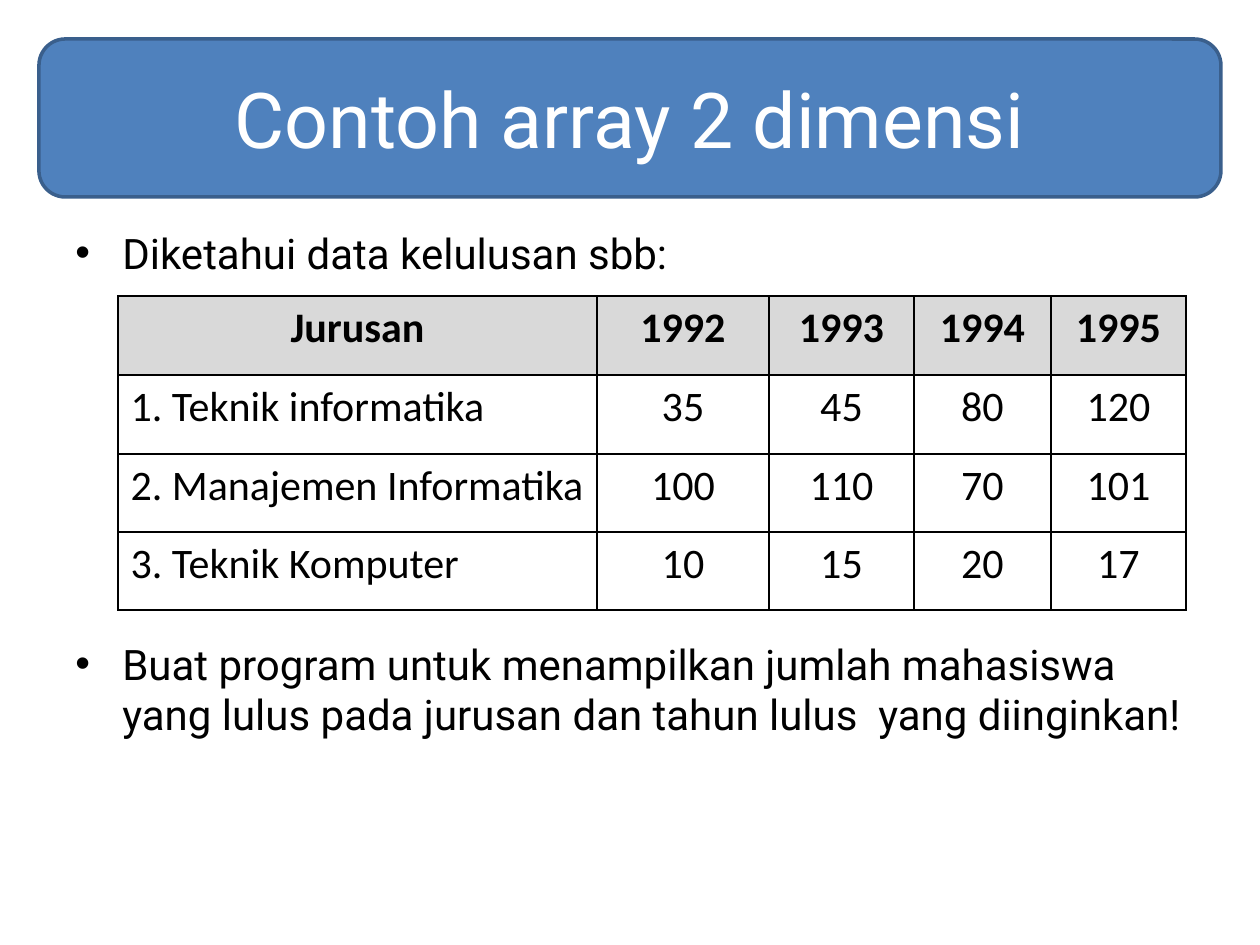
"""Build a slide with a title banner, two bullets and a graduation table."""
from dataclasses import dataclass

from lxml import etree
from pptx import Presentation
from pptx import util as u
from pptx.dml.color import RGBColor
from pptx.enum import shapes, text
from pptx.oxml import ns

SCALE = u.Inches(1) / 126
COLORS = {
    "banner": "4F81BD",
    "edge": "3A5F8C",
    "head": "D9D9D9",
    "light": "FFFFFF",
    "dark": "000000",
}
TITLE_FONT = {"name": "Roboto", "size": u.Pt(44), "bold": False}
BULLET_FONT = {"name": "Roboto", "size": u.Pt(24), "bold": False}
CELL_FONT = {"name": "Calibri", "size": u.Pt(24), "bold": False}
HEAD_FONT = CELL_FONT | {"bold": True}


@dataclass(frozen=True)
class Box:
    left: int
    top: int
    width: int
    height: int

    def emu(self) -> tuple:
        return tuple(map(px, (self.left, self.top, self.width, self.height)))


@dataclass(frozen=True)
class Bullet:
    box: Box
    words: str


TITLE = "Contoh array 2 dimensi"
BANNER = Box(39, 39, 1182, 158)
BULLETS = (
    Bullet(Box(63, 221, 1134, 62), "Diketahui data kelulusan sbb:"),
    Bullet(
        Box(63, 632, 1134, 113),
        "Buat program untuk menampilkan jumlah mahasiswa "
        "yang lulus pada jurusan dan tahun lulus  yang diinginkan!",
    ),
)
COLUMNS = (479, 172, 145, 137, 135)
ROWS = (79, 79, 78, 78)
TABLE = Box(118, 296, sum(COLUMNS), sum(ROWS))
GRADUATES = (
    ("Jurusan", "1992", "1993", "1994", "1995"),
    ("1. Teknik informatika", "35", "45", "80", "120"),
    ("2. Manajemen Informatika", "100", "110", "70", "101"),
    ("3. Teknik Komputer", "10", "15", "20", "17"),
)


def px(length: int) -> int:
    return round(length * SCALE)


def rgb(name: str) -> RGBColor:
    return RGBColor.from_string(COLORS[name])


def write(p, words: str, font: dict, color: str, align) -> None:
    p.alignment = align
    r = p.add_run()
    r.text = words
    for key, value in font.items():
        setattr(r.font, key, value)
    r.font.color.rgb = rgb(color)


def add_banner(s, box: Box, words: str) -> None:
    sp = s.shapes.add_shape(shapes.MSO_SHAPE.ROUNDED_RECTANGLE, *box.emu())
    sp.shadow.inherit = False
    sp.fill.solid()
    sp.fill.fore_color.rgb = rgb("banner")
    sp.line.color.rgb = rgb("edge")
    sp.line.width = u.Pt(2)
    tf = sp.text_frame
    tf.vertical_anchor = text.MSO_ANCHOR.MIDDLE
    write(tf.paragraphs[0], words, TITLE_FONT, "light", text.PP_ALIGN.CENTER)


def add_bullet(s, bullet: Bullet) -> None:
    tf = s.shapes.add_textbox(*bullet.box.emu()).text_frame
    tf.word_wrap = True
    p = tf.paragraphs[0]
    pPr = p._p.get_or_add_pPr()
    indent = px(47)
    pPr.set("marL", str(indent))
    pPr.set("indent", str(-indent))
    etree.SubElement(pPr, ns.qn("a:buFont"), typeface="Arial")
    etree.SubElement(pPr, ns.qn("a:buChar"), char="•")
    write(p, bullet.words, BULLET_FONT, "dark", text.PP_ALIGN.LEFT)


def add_borders(cell) -> None:
    tcPr = cell._tc.get_or_add_tcPr()
    for side in ("lnL", "lnR", "lnT", "lnB"):
        ln = etree.SubElement(tcPr, ns.qn(f"a:{side}"), w=str(u.Pt(1)))
        fill = etree.SubElement(ln, ns.qn("a:solidFill"))
        etree.SubElement(fill, ns.qn("a:srgbClr"), val=COLORS["dark"])


def fill_cell(cell, words: str, is_head: bool, centred: bool) -> None:
    add_borders(cell)
    if is_head:
        cell.fill.solid()
        cell.fill.fore_color.rgb = rgb("head")
    else:
        cell.fill.background()
    align = text.PP_ALIGN.CENTER if centred else text.PP_ALIGN.LEFT
    font = HEAD_FONT if is_head else CELL_FONT
    write(cell.text_frame.paragraphs[0], words, font, "dark", align)


def add_graduates(s, box: Box) -> None:
    table = s.shapes.add_table(len(ROWS), len(COLUMNS), *box.emu()).table
    table.horz_banding = False
    for column, width in zip(table.columns, COLUMNS):
        column.width = px(width)
    for row, height in zip(table.rows, ROWS):
        row.height = px(height)
    for i, values in enumerate(GRADUATES):
        for j, words in enumerate(values):
            fill_cell(table.cell(i, j), words, i == 0, i == 0 or j > 0)


def main() -> None:
    prs = Presentation()
    prs.slide_width, prs.slide_height = px(1260), px(945)
    s = prs.slides.add_slide(prs.slide_layouts[6])
    add_banner(s, BANNER, TITLE)
    for bullet in BULLETS:
        add_bullet(s, bullet)
    add_graduates(s, TABLE)
    prs.save("out.pptx")


if __name__ == "__main__":
    main()
